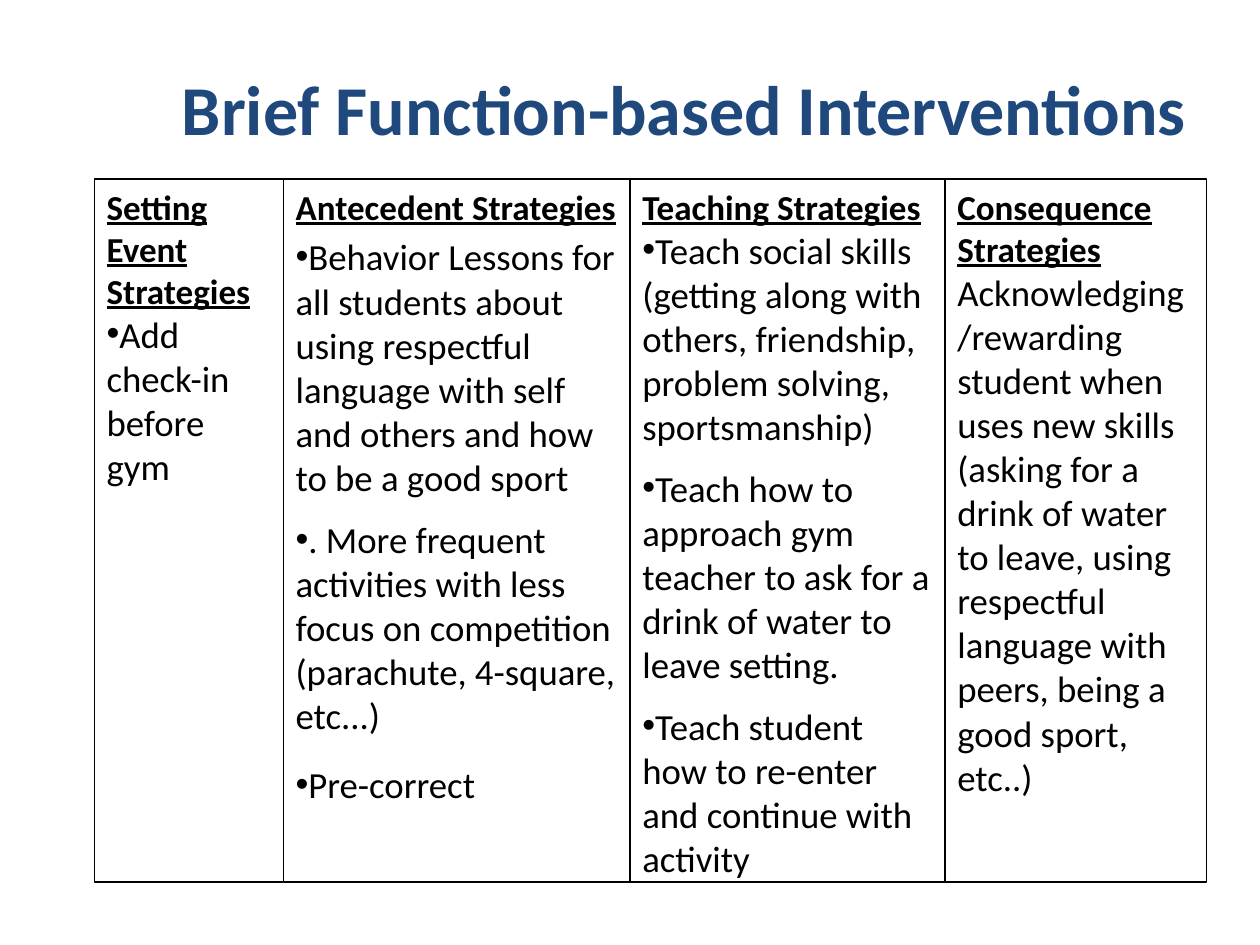
from lxml.etree import SubElement as Sub
from pptx import Presentation
from pptx.dml.color import RGBColor
from pptx.enum.shapes import MSO_SHAPE as Shape
from pptx.enum.text import MSO_ANCHOR as Anchor, PP_ALIGN as Align
from pptx.oxml.ns import qn
from pptx.util import Cm, Pt

NAVY = RGBColor(0x1F, 0x49, 0x7D)
BLACK = RGBColor(0, 0, 0)
WHITE = RGBColor(255, 255, 255)

PLANS = [
    (3.81, "Setting Event Strategies", True, [("Add check-in before gym", 0)]),
    (6.99, "Antecedent Strategies", True, [
        ("Behavior Lessons for all students about using respectful language "
         "with self and others and how to be a good sport", 4),
        (". More frequent activities with less focus on competition "
         "(parachute, 4-square, etc...)", 10),
        ("Pre-correct", 14)]),
    (6.35, "Teaching Strategies", True, [
        ("Teach social skills (getting along with others, friendship, "
         "problem solving, sportsmanship)", 0),
        ("Teach how to approach gym teacher to ask for a drink of water "
         "to leave setting.", 10),
        ("Teach student how to re-enter and continue with activity", 10)]),
    (5.28, "Consequence Strategies", False, [
        ("Acknowledging/rewarding student when uses new skills (asking for "
         "a drink of water to leave, using respectful language with peers, "
         "being a good sport, etc..)", 0)]),
]


def style(para, size, color, bold=False, line=False):
    """Set the font of a whole paragraph."""
    font = para.font
    font.name, font.size, font.bold = "Calibri", Pt(size), bold
    font.underline = line
    font.color.rgb = color


def add_title(slide, left, top, width, height):
    """Place the slide title in its placeholder."""
    title = slide.shapes.title
    title.left, title.top = Cm(left), Cm(top)
    title.width, title.height = Cm(width), Cm(height)
    frame = title.text_frame
    frame.vertical_anchor = Anchor.MIDDLE
    para = frame.paragraphs[0]
    para.text = "Brief Function-based Interventions"
    para.alignment = Align.CENTER
    style(para, 40, NAVY, bold=True)


def add_panel(slide, left, top, width, height, head, dots, items):
    """Draw one bordered column with a heading and its strategies."""
    box = slide.shapes.add_shape(
        Shape.RECTANGLE, Cm(left), Cm(top), Cm(width), Cm(height))
    box.shadow.inherit = False
    box.fill.solid()
    box.fill.fore_color.rgb = WHITE
    box.line.color.rgb = BLACK
    box.line.width = Pt(0.75)
    frame = box.text_frame
    frame.word_wrap = True
    frame.vertical_anchor = Anchor.TOP
    para = frame.paragraphs[0]
    para.text = head
    para.alignment = Align.LEFT
    style(para, 20, BLACK, bold=True, line=True)
    for text, gap in items:
        para = frame.add_paragraph()
        para.text = text
        para.alignment = Align.LEFT
        para.space_before = Pt(gap)
        if dots:
            props = para._p.get_or_add_pPr()
            Sub(props, qn("a:buFont"), typeface="Arial")
            Sub(props, qn("a:buChar"), char="•")
        style(para, 21, BLACK)


def add_panels(slide, left, top, height):
    """Set the strategy columns side by side."""
    for width, head, dots, items in PLANS:
        add_panel(slide, left, top, width, height, head, dots, items)
        left += width


def main():
    """Build and save the slide."""
    deck = Presentation()
    deck.slide_width, deck.slide_height = Cm(25.4), Cm(19.05)
    slide = deck.slides.add_slide(deck.slide_layouts[5])
    add_title(slide, 3.25, 1.07, 21.08, 2.21)
    add_panels(slide, 1.9, 3.61, 14.17)
    deck.save("out.pptx")


if __name__ == "__main__":
    main()
